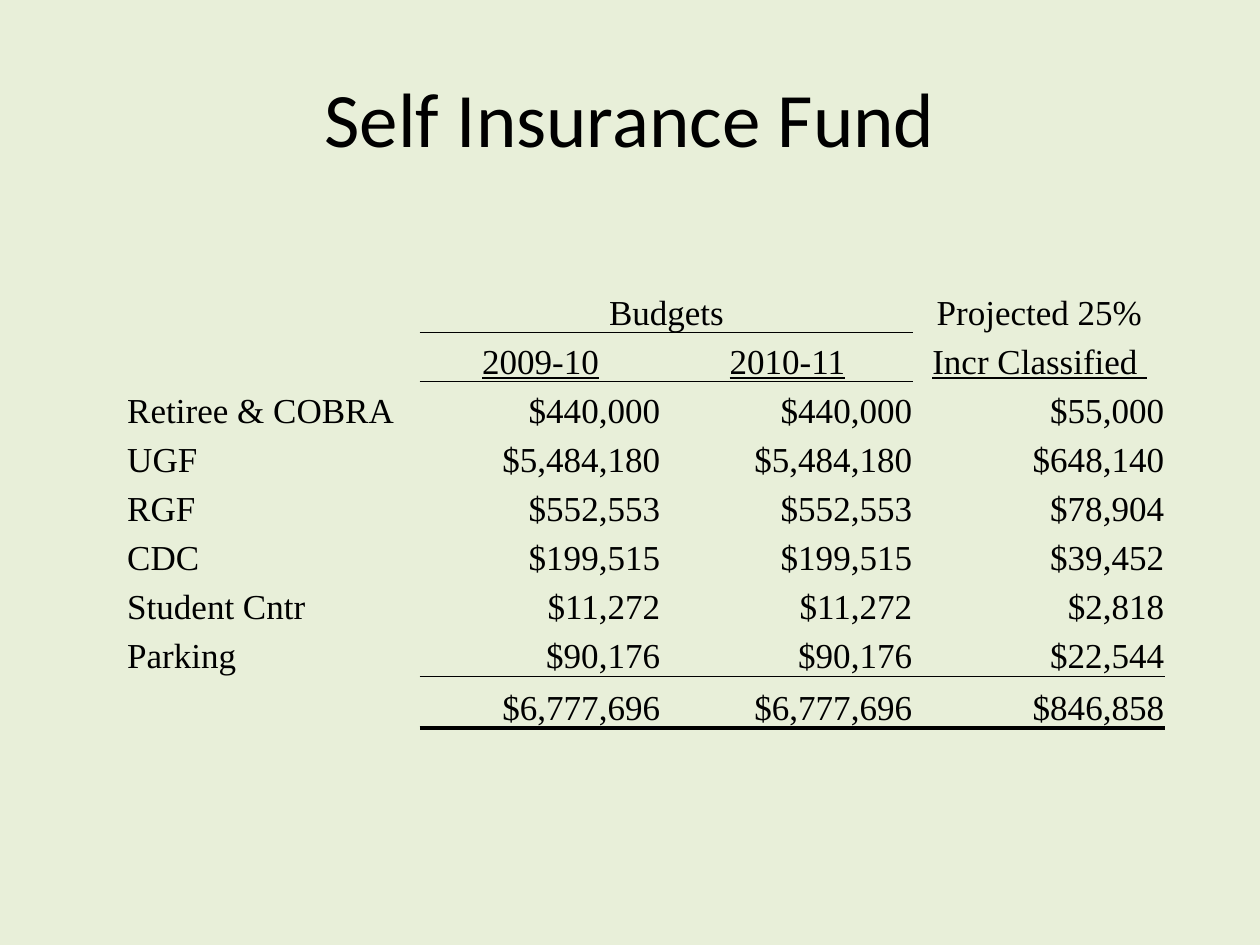
from lxml import etree
from pptx import Presentation
from pptx.dml.color import RGBColor
from pptx.enum.text import MSO_ANCHOR as Anchor, PP_ALIGN as Align
from pptx.oxml.ns import qn
from pptx.util import Inches, Pt

BLACK = RGBColor(0x00, 0x00, 0x00)
PALE_GREEN = RGBColor(0xE8, 0xEF, 0xD9)
NO_STYLE_NO_GRID = "{2D5ABB26-0587-4C30-8999-92F81FD0307C}"

COLUMN_WIDTHS = [2.16, 0.17, 1.92, 2, 2]
ROWS = [
    ["", "", "Budgets", "", "Projected 25%"],
    ["", "", "2009-10", "2010-11", "Incr Classified "],
    ["Retiree & COBRA", "", "$440,000", "$440,000", "$55,000"],
    ["UGF", "", "$5,484,180", "$5,484,180", "$648,140"],
    ["RGF", "", "$552,553", "$552,553", "$78,904"],
    ["CDC", "", "$199,515", "$199,515", "$39,452"],
    ["Student Cntr", "", "$11,272", "$11,272", "$2,818"],
    ["Parking", "", "$90,176", "$90,176", "$22,544"],
    ["", "", "$6,777,696", "$6,777,696", "$846,858"],
]
HEADER_ROWS = 2
FIRST_VALUE_COLUMN = 2
TOTAL_ROW = len(ROWS) - 1
CELL_FORMAT = {
    "vertical_anchor": Anchor.BOTTOM,
    "margin_left": Inches(0.01),
    "margin_right": Inches(0.01),
    "margin_top": Inches(0.01),
    "margin_bottom": 0,
}


def set_format(target, values):
    for name, value in values.items():
        setattr(target, name, value)


def add_border(cell, side, points):
    """Draw one cell edge ("T" or "B") as a black line."""
    line = etree.SubElement(cell._tc.get_or_add_tcPr(), qn(f"a:ln{side}"), w=str(Pt(points)))
    fill = etree.SubElement(line, qn("a:solidFill"))
    etree.SubElement(fill, qn("a:srgbClr"), val=str(BLACK))


deck = Presentation()
set_format(deck, {"slide_width": Inches(10), "slide_height": Inches(7.5)})
page = deck.slides.add_slide(deck.slide_layouts[5])
page.background.fill.solid()
page.background.fill.fore_color.rgb = PALE_GREEN

title = page.shapes.title
set_format(title, {"left": Inches(0.5), "top": Inches(0.3),
                   "width": Inches(9), "height": Inches(1.25)})
title.text_frame.vertical_anchor = Anchor.MIDDLE
para = title.text_frame.paragraphs[0]
para.alignment = Align.CENTER
span = para.add_run()
span.text = "Self Insurance Fund"
set_format(span.font, {"size": Pt(44), "name": "Calibri"})
span.font.color.rgb = BLACK

frame = page.shapes.add_table(len(ROWS), len(COLUMN_WIDTHS), Inches(1), Inches(2.25),
                              Inches(8.25), Inches(3.5))
table = frame.table
set_format(table, {"first_row": False, "horz_banding": False})
table._tbl.tblPr.find(qn("a:tableStyleId")).text = NO_STYLE_NO_GRID
for column, width in zip(table.columns, COLUMN_WIDTHS):
    column.width = Inches(width)
for row in table.rows:
    row.height = Inches(0.39)
table.rows[TOTAL_ROW].height = Inches(0.41)
table.cell(0, 2).merge(table.cell(0, 3))

for r, texts in enumerate(ROWS):
    for c, text in enumerate(texts):
        cell = table.cell(r, c)
        set_format(cell, CELL_FORMAT)

        under_budgets = c in (2, 3)
        is_value = c >= FIRST_VALUE_COLUMN
        if (r == 1 and under_budgets) or (r == TOTAL_ROW and is_value):
            add_border(cell, "T", 0.5)
        if (r == 0 and under_budgets) or (r == TOTAL_ROW - 1 and is_value):
            add_border(cell, "B", 0.5)
        if r == TOTAL_ROW and is_value:
            add_border(cell, "B", 2)
        cell.fill.background()

        if not text:
            continue
        para = cell.text_frame.paragraphs[0]
        if r < HEADER_ROWS:
            para.alignment = Align.CENTER
        else:
            para.alignment = Align.RIGHT if is_value else Align.LEFT
        span = para.add_run()
        span.text = text
        set_format(span.font, {"size": Pt(20), "name": "Times New Roman", "underline": r == 1})
        span.font.color.rgb = BLACK

deck.save("out.pptx")
